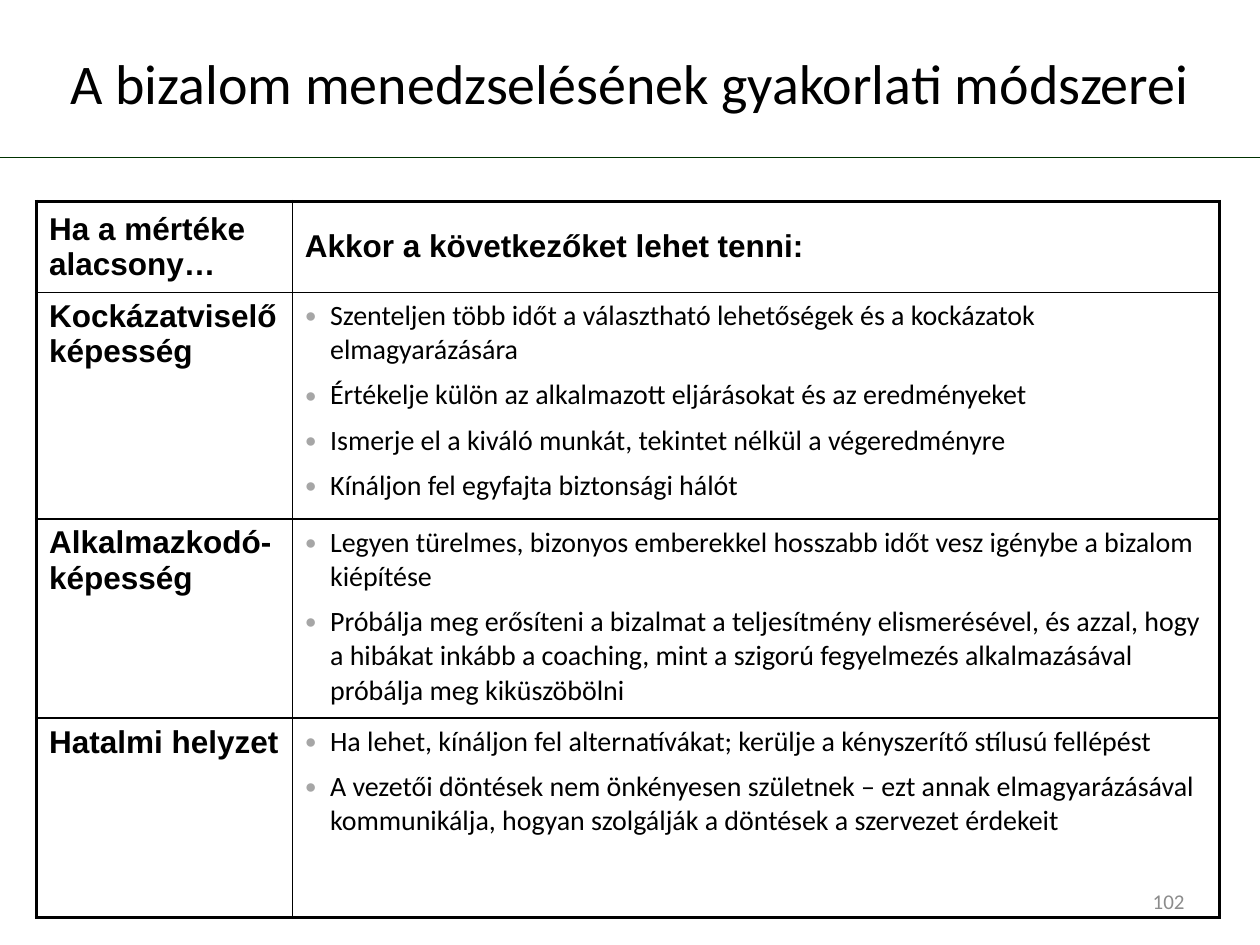
from lxml import etree
from pptx import Presentation
from pptx.dml.color import RGBColor
from pptx.enum.shapes import MSO_CONNECTOR
from pptx.enum.text import MSO_ANCHOR, PP_ALIGN
from pptx.oxml import parse_xml
from pptx.oxml.ns import nsdecls, qn
from pptx.util import Inches, Pt

MIDDLE, TOP = MSO_ANCHOR.MIDDLE, MSO_ANCHOR.TOP
LEFT, CENTER, RIGHT = PP_ALIGN.LEFT, PP_ALIGN.CENTER, PP_ALIGN.RIGHT
STRAIGHT = MSO_CONNECTOR.STRAIGHT
THIN, THICK = 1, 2.25
COLS = [2.03, 7.36]
HEIGHTS = [0.72, 1.8, 1.58, 1.58]
HEAD = ("Ha a mértéke alacsony…", "Akkor a következőket lehet tenni:")
ROWS = [
    ("Kockázatviselő képesség", [
        "Szenteljen több időt a választható lehetőségek és a kockázatok elmagyarázására",
        "Értékelje külön az alkalmazott eljárásokat és az eredményeket",
        "Ismerje el a kiváló munkát, tekintet nélkül a végeredményre",
        "Kínáljon fel egyfajta biztonsági hálót"]),
    ("Alkalmazkodó-képesség", [
        "Legyen türelmes, bizonyos emberekkel hosszabb időt vesz igénybe a bizalom kiépítése",
        "Próbálja meg erősíteni a bizalmat a teljesítmény elismerésével, és azzal, hogy "
        "a hibákat inkább a coaching, mint a szigorú fegyelmezés alkalmazásával "
        "próbálja meg kiküszöbölni"]),
    ("Hatalmi helyzet", [
        "Ha lehet, kínáljon fel alternatívákat; kerülje a kényszerítő stílusú fellépést",
        "A vezetői döntések nem önkényesen születnek – ezt annak elmagyarázásával "
        "kommunikálja, hogyan szolgálják a döntések a szervezet érdekeit"]),
]


def color(code):
    return RGBColor.from_string(code)


def write(frame, texts, size=16, font="Calibri", bold=False, tint="000000",
          align=LEFT, gap=0, dots=False):
    """Fill a text frame with one paragraph per text."""
    frame.word_wrap = True
    for i, text in enumerate(texts):
        para = frame.add_paragraph() if i else frame.paragraphs[0]
        para.alignment = align
        para.space_before = Pt(gap if i else 0)
        run = para.add_run()
        run.text = text
        run.font.size = Pt(size)
        run.font.name = font
        run.font.bold = bold
        run.font.color.rgb = color(tint)
        if dots:
            add_dot(para)


def add_dot(para):
    props = para._p.get_or_add_pPr()
    props.set("marL", str(Inches(0.2)))
    props.set("indent", str(Inches(-0.2)))
    clr = etree.SubElement(props, qn("a:buClr"))
    etree.SubElement(clr, qn("a:srgbClr"), val="A6A6A6")
    etree.SubElement(props, qn("a:buSzPct"), val="70000")
    etree.SubElement(props, qn("a:buFont"), typeface="Arial")
    etree.SubElement(props, qn("a:buChar"), char="●")


def add_text(slide, box, text, **style):
    frame = slide.shapes.add_textbox(*map(Inches, box)).text_frame
    frame.vertical_anchor = MIDDLE
    write(frame, [text], **style)


def add_rule(slide, y, width):
    line = slide.shapes.add_connector(
        STRAIGHT, 0, Inches(y), Inches(width), Inches(y))
    line.line.color.rgb = color("003300")
    line.line.width = Pt(1)
    etree.SubElement(line._element.spPr, qn("a:effectLst"))


def add_edges(cell, **widths):
    """Draw borders, with widths in points keyed L, R, T, B in that order."""
    props = cell._tc.get_or_add_tcPr()
    for i, (side, width) in enumerate(widths.items()):
        props.insert(i, parse_xml(
            f'<a:ln{side} {nsdecls("a")} w="{Pt(width)}"><a:solidFill>'
            f'<a:srgbClr val="000000"/></a:solidFill></a:ln{side}>'))


def add_grid(slide, box):
    grid = slide.shapes.add_table(
        len(HEIGHTS), len(COLS), *map(Inches, box)).table
    grid.first_row = grid.horz_banding = False
    for col, width in zip(grid.columns, COLS):
        col.width = Inches(width)
    for row, height in zip(grid.rows, HEIGHTS):
        row.height = Inches(height)

    label = dict(size=18, font="Arial", bold=True)
    for c, text in enumerate(HEAD):
        write(grid.cell(0, c).text_frame, [text], **label)
    for r, (name, tips) in enumerate(ROWS, 1):
        write(grid.cell(r, 0).text_frame, [name], **label)
        write(grid.cell(r, 1).text_frame, tips, gap=6.4, dots=True)

    for r in range(len(HEIGHTS)):
        for c in range(len(COLS)):
            cell = grid.cell(r, c)
            cell.vertical_anchor = TOP if r else MIDDLE
            cell.fill.background()
            add_edges(cell,
                      L=THIN if c else THICK,
                      R=THICK if c == len(COLS) - 1 else THIN,
                      T=THIN if r else THICK,
                      B=THICK if r == len(HEIGHTS) - 1 else THIN)


def main():
    deck = Presentation()
    deck.slide_width, deck.slide_height = Inches(10), Inches(7.5)
    slide = deck.slides.add_slide(deck.slide_layouts[6])
    add_rule(slide, 1.25, 10)
    add_text(slide, (0, 0.3, 10, 0.7),
             "A bizalom menedzselésének gyakorlati módszerei",
             size=32, align=CENTER)
    add_grid(slide, (0.29, 1.6, sum(COLS), sum(HEIGHTS)))
    add_text(slide, (7.17, 6.95, 2.33, 0.4), "102",
             size=12, tint="8C8C8C", align=RIGHT)
    deck.save("out.pptx")


if __name__ == "__main__":
    main()
